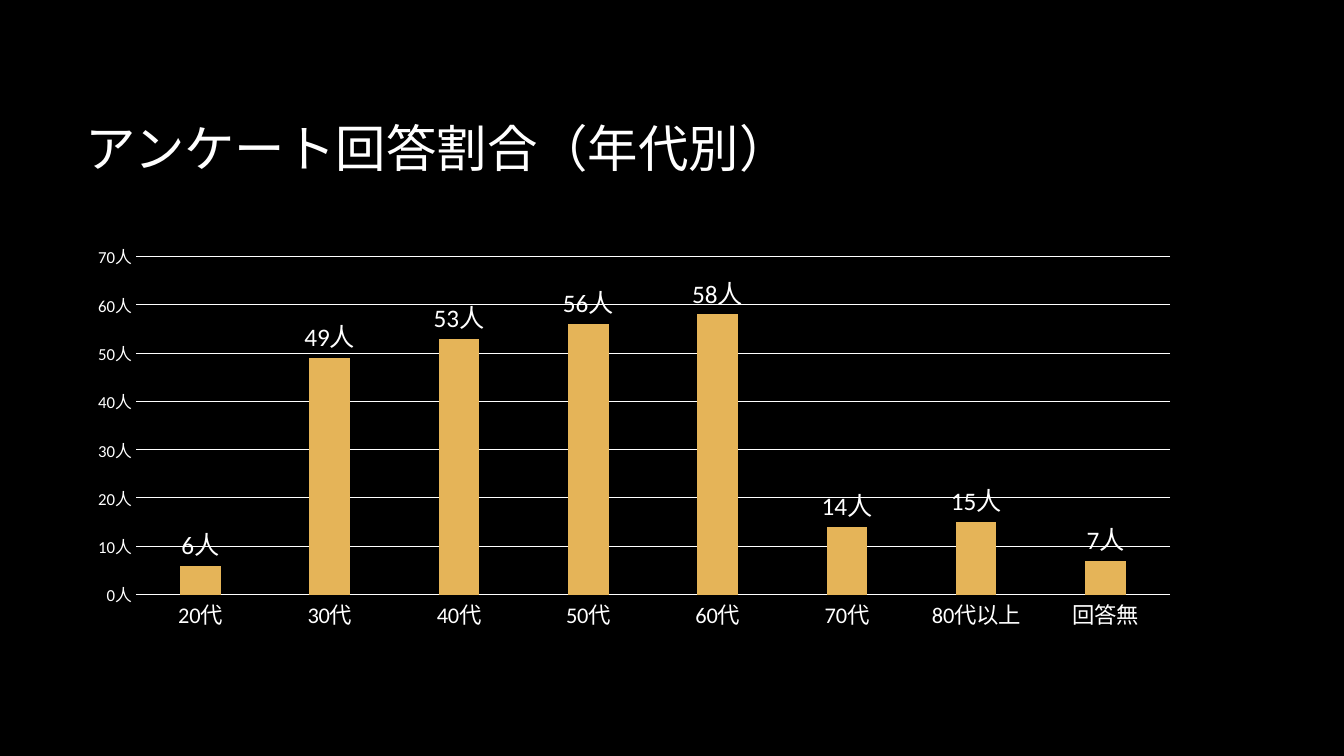
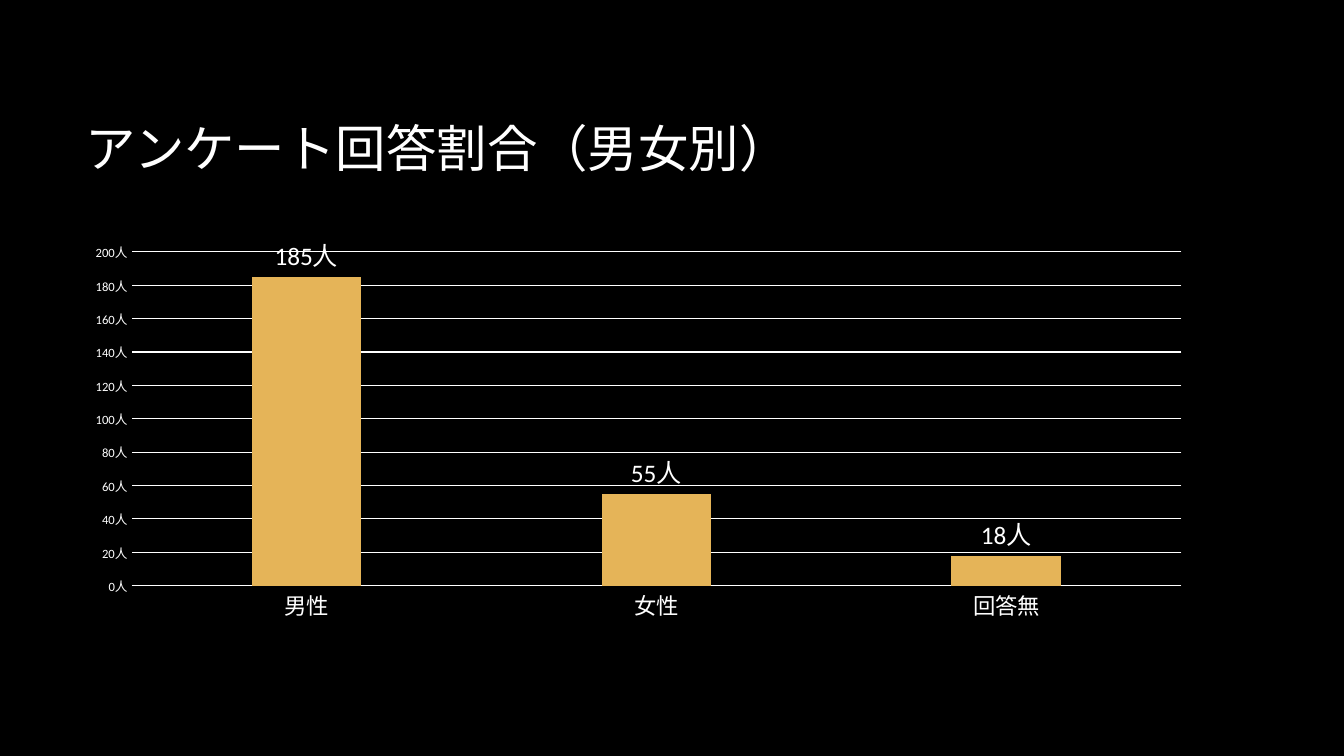
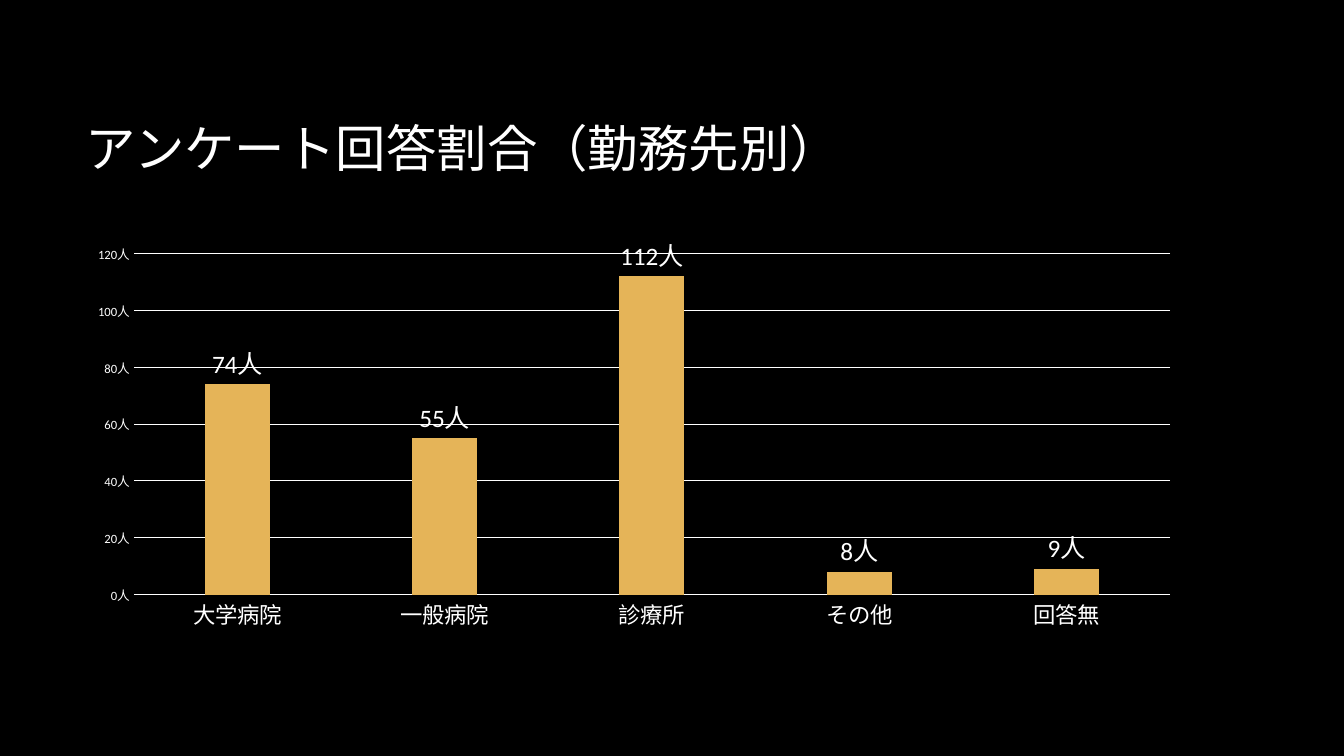
from dataclasses import dataclass

from lxml.etree import SubElement
from pptx import Presentation
from pptx.chart.data import CategoryChartData
from pptx.dml.color import RGBColor
from pptx.enum.chart import XL_CHART_TYPE, XL_LABEL_POSITION, XL_TICK_MARK
from pptx.enum.lang import MSO_LANGUAGE_ID
from pptx.enum.text import MSO_ANCHOR, MSO_AUTO_SIZE, PP_ALIGN
from pptx.oxml.ns import qn
from pptx.util import Inches, Pt


@dataclass(frozen=True)
class Theme:
    font: str = "Calibri"
    background: RGBColor = RGBColor.from_string("000000")
    text: RGBColor = RGBColor.from_string("FFFFFF")
    bar: RGBColor = RGBColor.from_string("E5B458")
    title_size: float = 36
    label_size: float = 18
    category_size: float = 16
    chart_size: float = 10
    line_width: float = 0.75
    people_format: str = '0"人"'
    # Left, top, width and height in percent of the slide
    title_box: tuple = (5.63, 8.93, 83.1, 21.2)
    chart_box: tuple = (5.63, 31.2, 83.1, 53.2)


class Deck:
    """Holds the style and the current slide."""

    def __init__(self, theme):
        self.theme = theme
        self.prs = Presentation()
        self.prs.slide_width, self.prs.slide_height = Inches(13.33), Inches(7.5)
        fill = self.prs.slide_master.background.fill
        fill.solid()
        fill.fore_color.rgb = theme.background
        self.slide = None

    def box(self, shares):
        sides = (self.prs.slide_width, self.prs.slide_height) * 2
        return [int(side * share / 100) for side, share in zip(sides, shares)]

    def style_font(self, font, size):
        font.name, font.size = self.theme.font, Pt(size)
        font.color.rgb = self.theme.text

    def style_line(self, line):
        line.color.rgb = self.theme.text
        line.width = Pt(self.theme.line_width)

    def add_slide(self, title):
        self.slide = self.prs.slides.add_slide(self.prs.slide_layouts[5])
        sp = self.slide.shapes.title
        sp.left, sp.top, sp.width, sp.height = self.box(self.theme.title_box)
        tf = sp.text_frame
        tf.text = title
        tf.word_wrap = True
        tf.auto_size = MSO_AUTO_SIZE.NONE
        tf.vertical_anchor = MSO_ANCHOR.MIDDLE
        p = tf.paragraphs[0]
        p.alignment = PP_ALIGN.LEFT
        self.style_font(p.font, self.theme.title_size)
        p.runs[0].font.language_id = MSO_LANGUAGE_ID.JAPANESE

    def add_column_chart(self, counts, scale_size, plot_area=None):
        theme = self.theme
        data = CategoryChartData()
        data.categories = list(counts)
        data.add_series("Series 1", list(counts.values()))
        chart = self.slide.shapes.add_chart(
            XL_CHART_TYPE.COLUMN_CLUSTERED, *self.box(theme.chart_box), data).chart
        chart.has_title = chart.has_legend = False
        self.style_font(chart.font, theme.chart_size)

        # Columns and their labels
        plot = chart.plots[0]
        plot.gap_width, plot.overlap = 219, -27
        plot.vary_by_categories = False
        fill = plot.series[0].format.fill
        fill.solid()
        fill.fore_color.rgb = theme.bar
        plot.has_data_labels = True
        labels = plot.data_labels
        labels.show_value = True
        labels.position = XL_LABEL_POSITION.OUTSIDE_END
        self.style_font(labels.font, theme.label_size)

        # Axes
        axes = ((chart.category_axis, theme.category_size),
                (chart.value_axis, scale_size))
        for axis, size in axes:
            axis.major_tick_mark = axis.minor_tick_mark = XL_TICK_MARK.NONE
            self.style_font(axis.tick_labels.font, size)
        self.style_line(chart.category_axis.format.line)
        chart.value_axis.format.line.fill.background()
        chart.value_axis.has_major_gridlines = True
        self.style_line(chart.value_axis.major_gridlines.format.line)
        for numbers in (labels, chart.value_axis.tick_labels):
            numbers.number_format = theme.people_format
            numbers.number_format_is_linked = False

        if plot_area:
            self.place_plot(chart, plot_area)

    def place_plot(self, chart, shares):
        """Fix the inner plot area, in shares of the chart."""
        area = next(chart.element.iter(qn("c:plotArea")))
        for old in area.findall(qn("c:layout")):
            area.remove(old)
        layout = SubElement(area, qn("c:layout"))
        area.insert(0, layout)
        manual = SubElement(layout, qn("c:manualLayout"))
        settings = [("layoutTarget", "inner"), ("xMode", "edge"), ("yMode", "edge")]
        for tag, value in settings + list(zip("xywh", shares)):
            SubElement(manual, qn(f"c:{tag}")).set("val", str(value))


def main():
    deck = Deck(Theme())

    # Answers by age
    deck.add_slide("アンケート回答割合（年代別）")
    deck.add_column_chart(
        {"20代": 6, "30代": 49, "40代": 53, "50代": 56, "60代": 58,
         "70代": 14, "80代以上": 15, "回答無": 7}, scale_size=12)

    # Answers by sex
    deck.add_slide("アンケート回答割合（男女別）")
    deck.add_column_chart({"男性": 185, "女性": 55, "回答無": 18}, scale_size=9,
                          plot_area=(0.05, 0.04, 0.94, 0.83))

    # Answers by workplace
    deck.add_slide("アンケート回答割合（勤務先別）")
    deck.add_column_chart(
        {"大学病院": 74, "一般病院": 55, "診療所": 112, "その他": 8, "回答無": 9},
        scale_size=9)

    deck.prs.save("out.pptx")


if __name__ == "__main__":
    main()
